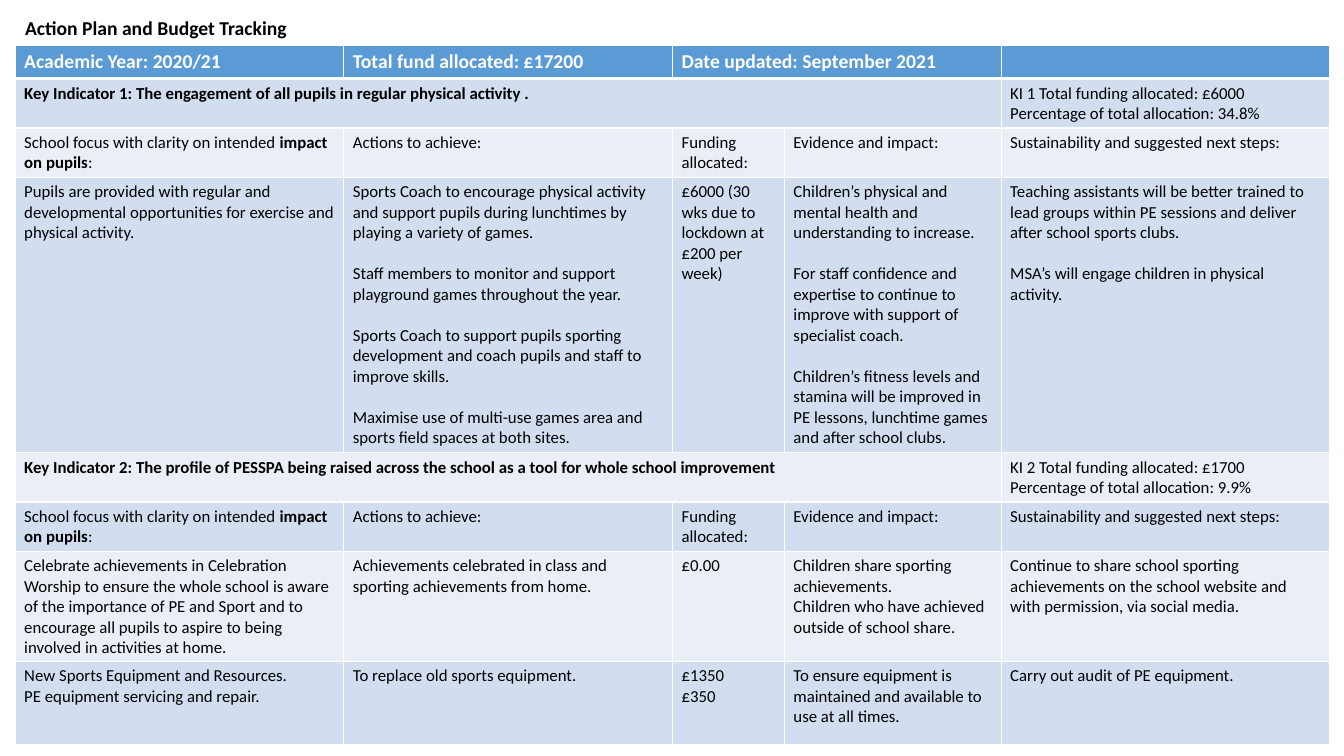
import pptx
import pptx.util
import pptx.dml.color
import pptx.enum.text
import pptx.oxml
import pptx.oxml.ns

Inches = pptx.util.Inches
Pt = pptx.util.Pt
RGBColor = pptx.dml.color.RGBColor

BLACK = RGBColor(0, 0, 0)
WHITE = RGBColor(0xFF, 0xFF, 0xFF)
BLUE = RGBColor(0x5B, 0x9B, 0xD5)
BANDS = [RGBColor(0xEA, 0xEF, 0xF7), RGBColor(0xD2, 0xDE, 0xEF)]

WIDTHS = [3.26, 3.26, 1.11, 2.15, 3.26]
HEIGHTS = [0.33, 0.49, 0.49, 2.73, 0.49, 0.49, 1.08, 0.83]
SPANS = {0: (2, 3), 1: (0, 3), 4: (0, 3)}
GAP_ROW = 3

HEADS = [
    "School focus with clarity on intended *impact on pupils*:",
    "Actions to achieve:",
    "Funding allocated:",
    "Evidence and impact:",
    "Sustainability and suggested next steps:",
]

ROWS = [
    ["Academic Year: 2020/21", "Total fund allocated: £17200",
     "Date updated: September 2021", "", ""],
    ["*Key Indicator 1: The engagement of all pupils in regular physical activity .*",
     "", "", "",
     "KI 1 Total funding allocated: £6000\nPercentage of total allocation: 34.8%"],
    HEADS,
    ["Pupils are provided with regular and developmental opportunities for "
     "exercise and physical activity.",
     "Sports Coach to encourage physical activity and support pupils during "
     "lunchtimes by playing a variety of games.\n"
     "Staff members to monitor and support playground games throughout the year.\n"
     "Sports Coach to support pupils sporting development and coach pupils and "
     "staff to improve skills.\n"
     "Maximise use of multi-use games area and sports field spaces at both sites.",
     "£6000 (30 wks due to lockdown at £200 per week)",
     "Children’s physical and mental health and understanding to increase.\n"
     "For staff confidence and expertise to continue to improve with support of "
     "specialist coach.\n"
     "Children’s fitness levels and stamina will be improved in PE lessons, "
     "lunchtime games and after school clubs.",
     "Teaching assistants will be better trained to lead groups within PE "
     "sessions and deliver after school sports clubs.\n"
     "MSA’s will engage children in physical activity."],
    ["*Key Indicator 2: The profile of PESSPA being raised across the school as "
     "a tool for whole school improvement*",
     "", "", "",
     "KI 2 Total funding allocated: £1700\nPercentage of total allocation: 9.9%"],
    HEADS,
    ["Celebrate achievements in Celebration Worship to ensure the whole school "
     "is aware of the importance of PE and Sport and to encourage all pupils to "
     "aspire to being involved in activities at home.",
     "Achievements celebrated in class and sporting achievements from home.",
     "£0.00",
     "Children share sporting achievements.\n"
     "Children who have achieved outside of school share.",
     "Continue to share school sporting achievements on the school website and "
     "with permission, via social media."],
    ["New Sports Equipment and Resources.\nPE equipment servicing and repair.",
     "To replace old sports equipment.",
     "£1350\n£350",
     "To ensure equipment is maintained and available to use at all times.",
     "Carry out audit of PE equipment."],
]


def write(frame, text, size=12, color=BLACK, bold=False, gap=0, font="Calibri"):
    for num, line in enumerate(text.split("\n")):
        para = frame.add_paragraph() if num else frame.paragraphs[0]
        if num and gap:
            para.space_before = Pt(gap)
        if not line:
            para._p.get_or_add_endParaRPr().set("sz", str(size * 100))
            continue
        for part, piece in enumerate(line.split("*")):
            if piece:
                run = para.add_run()
                run.text = piece
                run.font.name = font
                run.font.size = Pt(size)
                run.font.bold = bold or part % 2 == 1
                run.font.color.rgb = color


class Page:
    def __init__(self, deck, font="Calibri"):
        self.slide = deck.slides.add_slide(deck.slide_layouts[6])
        self.font = font

    def label(self, text, left, top, width, height, **style):
        box = self.slide.shapes.add_textbox(
            Inches(left), Inches(top), Inches(width), Inches(height))
        frame = box.text_frame
        frame.word_wrap = True
        frame.auto_size = pptx.enum.text.MSO_AUTO_SIZE.SHAPE_TO_FIT_TEXT
        write(frame, text, font=self.font, **style)

    def edge(self, cell, side, width):
        props = cell._tc.get_or_add_tcPr()
        props.append(pptx.oxml.parse_xml(
            f'<a:ln{side} {pptx.oxml.ns.nsdecls("a")} w="{Pt(width)}">'
            f'<a:solidFill><a:srgbClr val="{WHITE}"/></a:solidFill></a:ln{side}>'))

    def cell(self, cell, text, fill, base=1, **style):
        cell.margin_left = cell.margin_right = Pt(6.5)
        cell.margin_top = cell.margin_bottom = Pt(3.25)
        for side in "LRTB":
            self.edge(cell, side, base if side == "B" else 1)
        cell.fill.solid()
        cell.fill.fore_color.rgb = fill
        write(cell.text_frame, text, font=self.font, **style)

    def table(self, rows, left, top):
        grid = self.slide.shapes.add_table(
            len(rows), len(WIDTHS), Inches(left), Inches(top),
            Inches(sum(WIDTHS)), Inches(sum(HEIGHTS))).table
        for col, width in zip(grid.columns, WIDTHS):
            col.width = Inches(width)
        for row, height in zip(grid.rows, HEIGHTS):
            row.height = Inches(height)
        for r, row in enumerate(rows):
            for c, text in enumerate(row):
                if r == 0:
                    self.cell(grid.cell(r, c), text, BLUE, base=3,
                              size=14, color=WHITE, bold=True)
                else:
                    self.cell(grid.cell(r, c), text, BANDS[r % 2],
                              gap=14.65 if r == GAP_ROW else 0)
        for r, (first, last) in SPANS.items():
            grid.cell(r, first).merge(grid.cell(r, last))


def main():
    deck = pptx.Presentation()
    deck.slide_width = Inches(13.33)
    deck.slide_height = Inches(7.5)
    page = Page(deck)
    page.label("Action Plan and Budget Tracking", 0.15, 0.11, 2.8, 0.34,
               size=14, bold=True)
    page.table(ROWS, 0.15, 0.45)
    deck.save("out.pptx")


if __name__ == "__main__":
    main()
